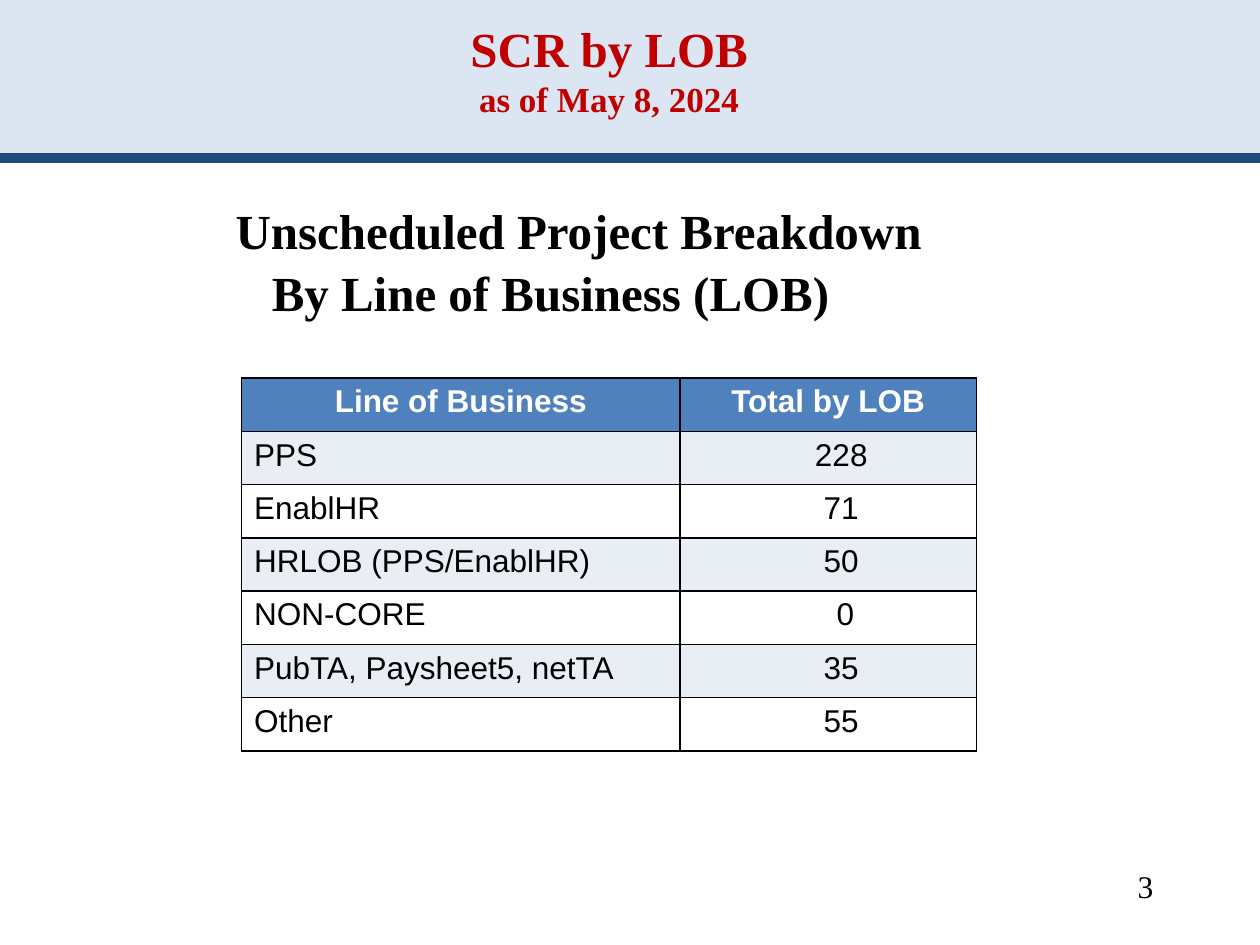
from lxml import etree
from pptx import Presentation
from pptx import util as u
from pptx.dml.color import RGBColor
from pptx.enum import shapes, text
from pptx.oxml.ns import qn

SERIF, SANS = "Times New Roman", "Arial"
RED, BLACK, WHITE = "C00000", "000000", "FFFFFF"
BAND, NAVY, HEADER_BLUE, STRIPE = "DCE6F2", "1F497D", "4F81BD", "E9EDF4"

# Content
TITLE = [("SCR by LOB", 28), ("as of May 8, 2024", 20)]
HEADING = [("Unscheduled Project Breakdown", 3.48),  # text, indent in cm
           ("By Line of Business (LOB)", 4.21)]
COLUMNS = [("Line of Business", 8.84), ("Total by LOB", 5.97)]  # width in cm
TOTALS = [
    ("PPS", "228"),
    ("EnablHR", "71"),
    ("HRLOB (PPS/EnablHR)", "50"),
    ("NON-CORE", "0"),
    ("PubTA, Paysheet5, netTA", "35"),
    ("Other", "55"),
]
PAGE_NUMBER = "3"
ROW_HEIGHT = 1.074
CELL_MARGIN = 0.25


def color(value):
    return RGBColor.from_string(value)


def add_run(paragraph, words, size, font, shade, bold=False):
    run = paragraph.add_run()
    run.text = words
    run.font.size, run.font.name, run.font.bold = u.Pt(size), font, bold
    run.font.color.rgb = color(shade)


def add_frame(slide, left, top, width, height):
    frame = slide.shapes.add_textbox(*map(u.Cm, (left, top, width, height))).text_frame
    frame.word_wrap = True
    return frame


def set_borders(cell):
    properties = cell._tc.get_or_add_tcPr()
    for position, side in enumerate(("a:lnL", "a:lnR", "a:lnT", "a:lnB")):
        border = etree.Element(qn(side), w=str(u.Pt(1)))
        fill = etree.SubElement(border, qn("a:solidFill"))
        etree.SubElement(fill, qn("a:srgbClr"), val=BLACK)
        properties.insert(position, border)


def fill_cell(cell, words, fill, shade=BLACK, bold=False, centered=False):
    cell.fill.solid()
    cell.fill.fore_color.rgb = color(fill)
    set_borders(cell)
    paragraph = cell.text_frame.paragraphs[0]
    if centered:
        paragraph.alignment = text.PP_ALIGN.CENTER
    add_run(paragraph, words, 18, SANS, shade, bold)


deck = Presentation()
deck.slide_width, deck.slide_height = u.Cm(25.4), u.Cm(19.05)
slide = deck.slides.add_slide(deck.slide_layouts[6])

# Title band and rule
band = slide.shapes.add_shape(shapes.MSO_SHAPE.RECTANGLE, 0, 0, deck.slide_width, u.Cm(3.15))
band.shadow.inherit = False
band.fill.solid()
band.fill.fore_color.rgb = color(BAND)
band.line.fill.background()

rule = slide.shapes.add_connector(shapes.MSO_CONNECTOR.STRAIGHT,
                                  0, u.Cm(3.18), deck.slide_width, u.Cm(3.18))
rule.line.color.rgb = color(NAVY)
rule.line.width = u.Pt(5.5)
etree.SubElement(rule._element.spPr, qn("a:effectLst"))

# Title
title = add_frame(slide, 0.43, 0.76, 23.7, 1.78)
title.vertical_anchor = text.MSO_ANCHOR.BOTTOM
title_lines = title.paragraphs[0]
title_lines.alignment = text.PP_ALIGN.CENTER
for number, (words, size) in enumerate(TITLE):
    if number:
        title_lines.add_line_break()
    add_run(title_lines, words, size, SERIF, RED, True)

# Heading
heading = add_frame(slide, 1.27, 3.92, 22.86, 2.8)
heading.margin_left = 0
for number, (words, indent) in enumerate(HEADING):
    line = heading.add_paragraph() if number else heading.paragraphs[0]
    line._p.get_or_add_pPr().set("marL", str(u.Cm(indent)))
    if number:
        line.space_before = u.Pt(1.5)
    add_run(line, words, 28, SERIF, BLACK, True)

# Table of totals
table_width = sum(width for _, width in COLUMNS)
table = slide.shapes.add_table(
    len(TOTALS) + 1, len(COLUMNS), u.Cm(4.87), u.Cm(7.62),
    u.Cm(table_width), u.Cm(ROW_HEIGHT * (len(TOTALS) + 1))).table
for row in table.rows:
    row.height = u.Cm(ROW_HEIGHT)
for index, (label, width) in enumerate(COLUMNS):
    table.columns[index].width = u.Cm(width)
    fill_cell(table.cell(0, index), label, HEADER_BLUE, WHITE, True, True)
for index, (business, total) in enumerate(TOTALS, 1):
    fill = STRIPE if index % 2 else WHITE
    fill_cell(table.cell(index, 0), business, fill)
    total_cell = table.cell(index, 1)
    fill_cell(total_cell, total, fill, centered=True)
    # Totals sit right of centre, single digits a little further
    total_cell.margin_left = u.Cm(CELL_MARGIN + (0.7 if len(total) == 1 else 0.53))

# Page number
page = add_frame(slide, 18.2, 17.35, 5.3, 1.27).paragraphs[0]
page.alignment = text.PP_ALIGN.RIGHT
add_run(page, PAGE_NUMBER, 18, SERIF, BLACK)

deck.save("out.pptx")
